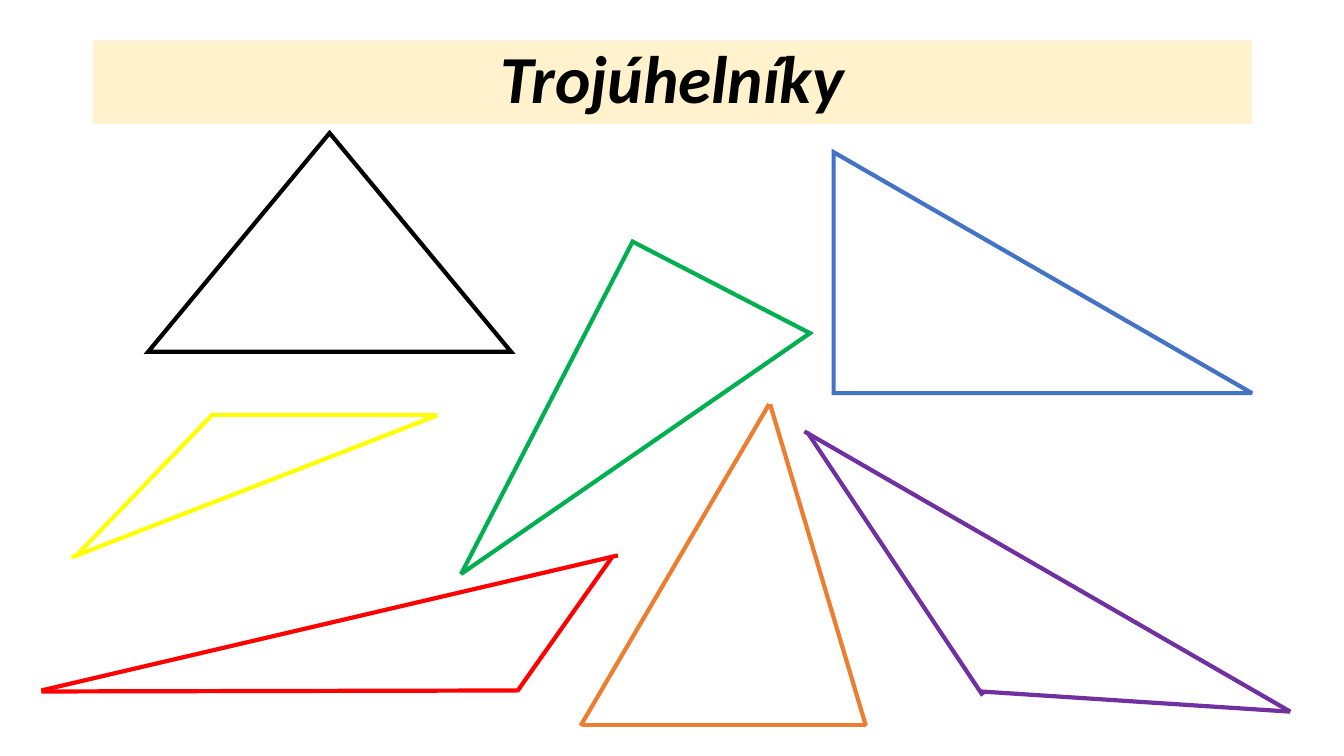
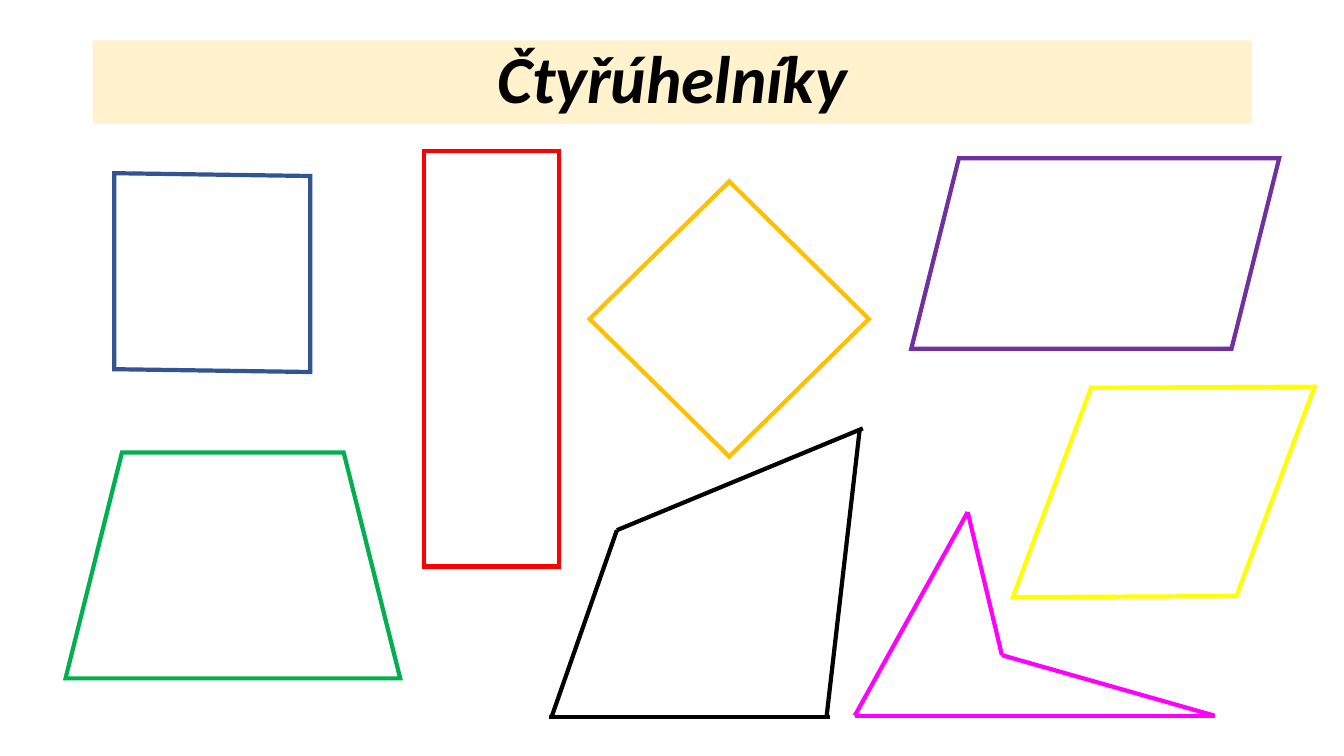
from dataclasses import dataclass, field

import pptx
import pptx.dml.color
import pptx.enum.shapes
import pptx.enum.text
import pptx.oxml
import pptx.util
from lxml import etree

GRID_CELL = pptx.util.Inches(0.1)
GRID_COLUMNS = 133.33
GRID_ROWS = 75
TITLE_ONLY = 5
PRESET = pptx.enum.shapes.MSO_SHAPE
DRAWING = "{http://schemas.openxmlformats.org/drawingml/2006/main}"


@dataclass(frozen=True)
class Theme:
    font: str = "Calibri"
    title_size: float = 48
    title_spacing: float = 0.9
    outline: float = 3
    band: str = "FFF2CC"
    black: str = "000000"
    blue: str = "4472C4"
    navy: str = "325491"
    green: str = "00B050"
    purple: str = "7030A0"
    orange: str = "ED7D31"
    amber: str = "FFC000"
    red: str = "FF0000"
    yellow: str = "FFFF00"
    magenta: str = "FF00FF"


THEME = Theme()


@dataclass(frozen=True)
class Box:
    column: float
    row: float
    columns: float
    rows: float

    def lengths(self) -> tuple[int, ...]:
        return tuple(map(cells, (self.column, self.row, self.columns, self.rows)))


@dataclass(frozen=True)
class Figure:
    preset: PRESET
    box: Box
    color: str
    rotation: float = 0


@dataclass(frozen=True)
class SidedFigure:
    color: str
    sides: list[tuple[float, float, float, float]]


@dataclass(frozen=True)
class Lesson:
    title: str
    figures: list[Figure]
    sided_figures: list[SidedFigure] = field(default_factory=list)


TITLE_BOX = Box(9.2, 4, 115, 8.3)

LESSONS = [
    Lesson(
        "Trojúhelníky",
        [
            Figure(PRESET.ISOSCELES_TRIANGLE, Box(14.7, 13.2, 36, 21.7), THEME.black),
            Figure(PRESET.RIGHT_TRIANGLE, Box(82.7, 15.1, 41.5, 23.9), THEME.blue),
            Figure(PRESET.RIGHT_TRIANGLE, Box(44.5, 35.1, 37.1, 19.8), THEME.green, 117.3),
        ],
        [
            SidedFigure(THEME.purple, [
                (128, 70.6, 97.3, 68.6),
                (97.5, 69, 80.1, 42.9),
                (128, 70.6, 79.8, 42.8),
            ]),
            SidedFigure(THEME.orange, [
                (57.7, 71.9, 85.9, 71.9),
                (57.6, 72, 76.3, 40.1),
                (76.4, 40.1, 85.9, 72),
            ]),
            SidedFigure(THEME.red, [
                (4.1, 68.6, 51.3, 68.5),
                (4.1, 68.5, 61.3, 55.1),
                (60.7, 55.3, 51.3, 68.6),
            ]),
            SidedFigure(THEME.yellow, [
                (43.4, 41.2, 21.1, 41.2),
                (21.2, 41, 7.4, 55.3),
                (43.4, 41.2, 7.1, 55.3),
            ]),
        ],
    ),
    Lesson(
        "Čtyřúhelníky",
        [
            Figure(PRESET.RECTANGLE, Box(42.1, 15, 13.4, 41.2), THEME.red),
            Figure(PRESET.PARALLELOGRAM, Box(90.4, 15.7, 36.5, 18.9), THEME.purple),
            Figure(PRESET.TRAPEZOID, Box(6.5, 44.9, 33.2, 22.4), THEME.green),
            Figure(PRESET.DIAMOND, Box(97.2, 36.2, 36.5, 25.2), THEME.yellow, 325.1),
            Figure(PRESET.DIAMOND, Box(7.2, 13.4, 27.7, 27.3), THEME.navy, 45.4),
            Figure(PRESET.DIAMOND, Box(58.5, 18, 27.7, 27.3), THEME.amber),
        ],
        [
            SidedFigure(THEME.black, [
                (54.5, 71.1, 82.3, 71.1),
                (54.7, 71.2, 61.2, 52.6),
                (61.2, 52.6, 85.6, 42.5),
                (82, 71.1, 85.3, 42.5),
            ]),
            SidedFigure(THEME.magenta, [
                (84.8, 71, 120.5, 71),
                (84.8, 71, 96, 50.8),
                (96, 50.8, 99.4, 65),
                (99.4, 65, 120.5, 71),
            ]),
        ],
    ),
]


def cells(count: float) -> int:
    return round(count * GRID_CELL)


def rgb(color: str) -> pptx.dml.color.RGBColor:
    return pptx.dml.color.RGBColor.from_string(color)


def style_outline(line: pptx.dml.line.LineFormat, color: str) -> None:
    line.color.rgb = rgb(color)
    line.width = pptx.util.Pt(THEME.outline)


def write_title(slide: pptx.slide.Slide, text: str) -> None:
    title = slide.shapes.title
    title.left, title.top, title.width, title.height = TITLE_BOX.lengths()
    title.fill.solid()
    title.fill.fore_color.rgb = rgb(THEME.band)
    frame = title.text_frame
    frame.text = text
    frame.word_wrap = True
    frame.auto_size = pptx.enum.text.MSO_AUTO_SIZE.NONE
    frame.vertical_anchor = pptx.enum.text.MSO_ANCHOR.MIDDLE
    paragraph = frame.paragraphs[0]
    paragraph.alignment = pptx.enum.text.PP_ALIGN.CENTER
    paragraph.line_spacing = THEME.title_spacing
    font = paragraph.runs[0].font
    font.name = THEME.font
    font.size = pptx.util.Pt(THEME.title_size)
    font.bold = font.italic = True
    font.color.rgb = rgb(THEME.black)


def draw_figure(slide: pptx.slide.Slide, figure: Figure) -> None:
    outline = slide.shapes.add_shape(figure.preset, *figure.box.lengths())
    outline.rotation = figure.rotation
    outline.shadow.inherit = False
    outline.fill.background()
    style_outline(outline.line, figure.color)
    stroke = outline.element.spPr.find(f"{DRAWING}ln")
    etree.SubElement(stroke, f"{DRAWING}miter", lim="800000")


def draw_sides(slide: pptx.slide.Slide, figure: SidedFigure) -> None:
    group = slide.shapes.add_group_shape()
    for ends in figure.sides:
        side = group.shapes.add_connector(
            pptx.enum.shapes.MSO_CONNECTOR.STRAIGHT, *map(cells, ends)
        )
        style_outline(side.line, figure.color)
        etree.SubElement(side.element.spPr, f"{DRAWING}effectLst")


def add_lesson(presentation: pptx.presentation.Presentation, lesson: Lesson) -> None:
    slide = presentation.slides.add_slide(presentation.slide_layouts[TITLE_ONLY])
    write_title(slide, lesson.title)
    for figure in lesson.figures:
        draw_figure(slide, figure)
    for sided_figure in lesson.sided_figures:
        draw_sides(slide, sided_figure)


def main() -> None:
    presentation = pptx.Presentation()
    presentation.slide_width = cells(GRID_COLUMNS)
    presentation.slide_height = cells(GRID_ROWS)
    for lesson in LESSONS:
        add_lesson(presentation, lesson)
    presentation.save("out.pptx")


if __name__ == "__main__":
    main()
